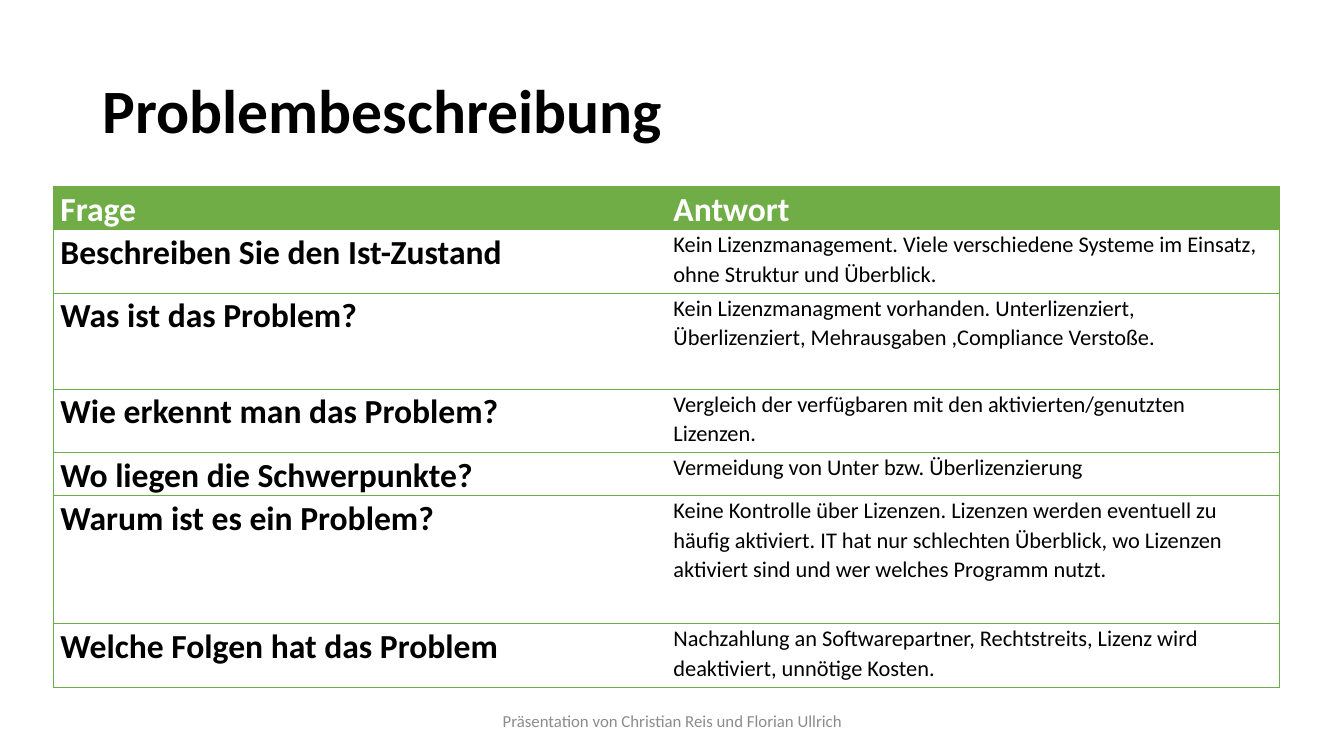
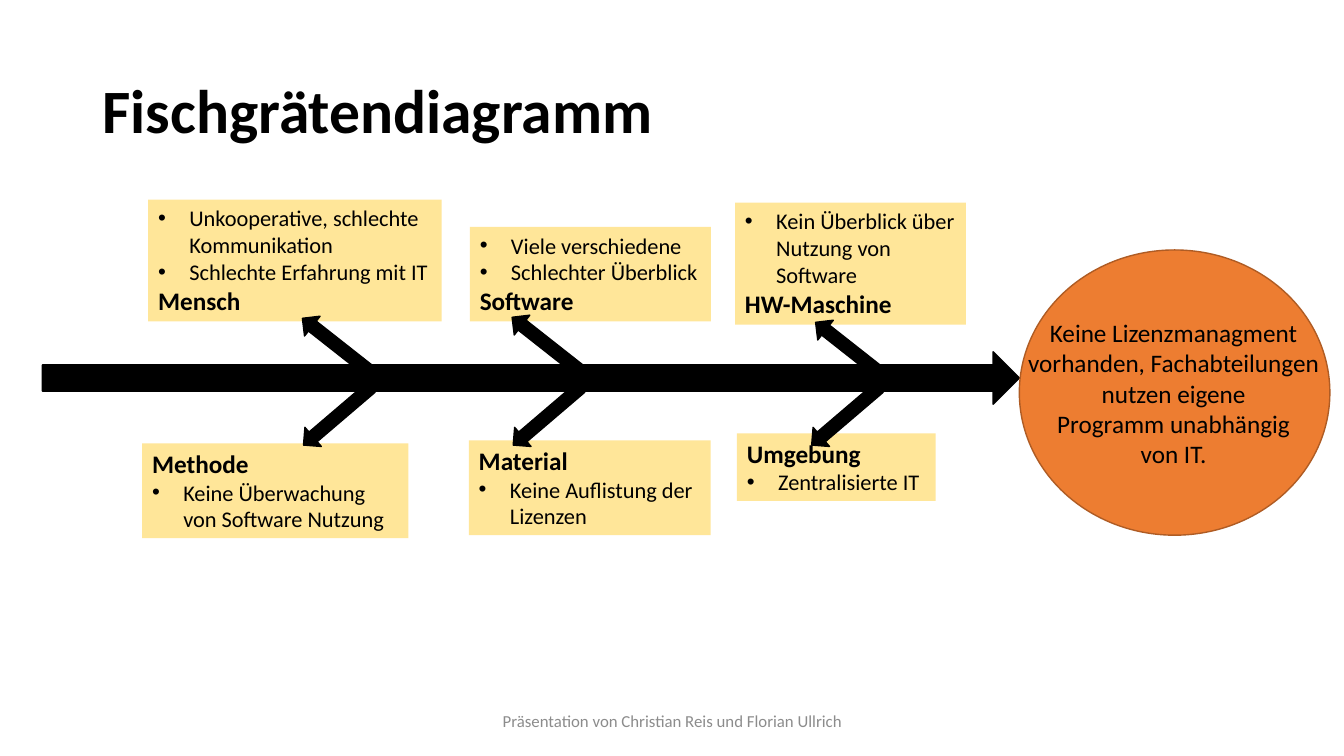
"""Build two slides: a question table and a fishbone diagram."""
from dataclasses import dataclass
from pptx import Presentation
from pptx.dml.color import RGBColor
from pptx.enum.shapes import MSO_SHAPE
from pptx.enum.text import MSO_ANCHOR, MSO_AUTO_SIZE, PP_ALIGN
from pptx.oxml.ns import qn
from pptx.util import Inches, Pt
from lxml import etree

RECT, OVAL = MSO_SHAPE.RECTANGLE, MSO_SHAPE.OVAL
RIGHT, DOWN = MSO_SHAPE.RIGHT_ARROW, MSO_SHAPE.DOWN_ARROW
TOP, MIDDLE = MSO_ANCHOR.TOP, MSO_ANCHOR.MIDDLE
LEFT, CENTER = PP_ALIGN.LEFT, PP_ALIGN.CENTER
GROW = MSO_AUTO_SIZE.SHAPE_TO_FIT_TEXT


@dataclass(frozen=True)
class Theme:
    """Hold colours, font and type sizes."""
    font: str = "Calibri"
    black: str = "000000"
    white: str = "FFFFFF"
    green: str = "70AD47"
    orange: str = "ED7D31"
    rust: str = "AF5C24"
    sand: str = "FFE699"
    gray: str = "8C8C8C"
    title: int = 44
    head: int = 24
    label: int = 18
    body: int = 16
    foot: int = 12


THEME = Theme()
FOOTER = "Präsentation von Christian Reis und Florian Ullrich"
ROWS = [
    (0.37, "Frage", "Antwort"),
    (0.63, "Beschreiben Sie den Ist-Zustand",
     "Kein Lizenzmanagement. Viele verschiedene Systeme im Einsatz, ohne Struktur und Überblick."),
    (0.95, "Was ist das Problem?",
     "Kein Lizenzmanagment vorhanden. Unterlizenziert, Überlizenziert, Mehrausgaben ,Compliance Verstoße."),
    (0.63, "Wie erkennt man das Problem?",
     "Vergleich der verfügbaren mit den aktivierten/genutzten Lizenzen."),
    (0.37, "Wo liegen die Schwerpunkte?", "Vermeidung von Unter bzw. Überlizenzierung"),
    (1.27, "Warum ist es ein Problem?",
     "Keine Kontrolle über Lizenzen. Lizenzen werden eventuell zu häufig aktiviert. "
     "IT hat nur schlechten Überblick, wo Lizenzen aktiviert sind und wer welches Programm nutzt."),
    (0.63, "Welche Folgen hat das Problem",
     "Nachzahlung an Softwarepartner, Rechtstreits, Lizenz wird deaktiviert, unnötige Kosten."),
]
UPPER = [
    ((1.47, 1.98, 2.91, 1.21), "Mensch", True,
     ["Unkooperative, schlechte Kommunikation", "Schlechte Erfahrung mit IT"]),
    ((4.66, 2.25, 2.39, 0.94), "Software", False,
     ["Viele verschiedene", "Schlechter Überblick"]),
    ((7.29, 2.01, 2.29, 1.21), "HW-Maschine", True,
     ["Kein Überblick über Nutzung von Software"]),
]
LOWER = [
    ((1.41, 4.4, 2.64, 0.94), "Methode", True, ["Keine Überwachung von Software Nutzung"]),
    ((4.65, 4.37, 2.4, 0.94), "Material", True, ["Keine Auflistung der Lizenzen"]),
    ((7.31, 4.3, 1.97, 0.67), "Umgebung", False, ["Zentralisierte IT"]),
]
EFFECT = ["Keine Lizenzmanagment", "vorhanden, Fachabteilungen", "nutzen eigene",
          "Programm unabhängig", "von IT."]
BONES = [
    (49.5, [(3.22, 3.69), (5.3, 3.69), (8.26, 3.69)]),
    (128.2, [(3.22, 2.99), (5.3, 2.98), (8.31, 3.03)]),
]


def apply(item, **values):
    """Set each format value on the item."""
    for name, value in values.items():
        setattr(item, name, value)


class Deck:
    """Hold the style and the current slide."""

    def __init__(self, theme):
        """Open a wide, empty deck."""
        self.theme = theme
        self.show = Presentation()
        apply(self.show, slide_width=Inches(13.33), slide_height=Inches(7.5))
        self.slide = None

    def page(self, title):
        """Start a slide with its title and footer."""
        look = self.theme
        self.slide = self.show.slides.add_slide(self.show.slide_layouts[6])
        frame = self.box(0.92, 0.4, 11.5, 1.45, anchor=MIDDLE)
        self.line(frame, title, look.title, bold=True, line_spacing=0.9)
        frame = self.box(4.42, 6.95, 4.5, 0.4, anchor=MIDDLE)
        self.line(frame, FOOTER, look.foot, look.gray, align=CENTER)

    def box(self, *place, wrap=True, anchor=TOP):
        """Add a text box and return its frame."""
        frame = self.slide.shapes.add_textbox(*map(Inches, place)).text_frame
        apply(frame, word_wrap=wrap, vertical_anchor=anchor)
        return frame

    def line(self, frame, text, size, color=None, bold=False, align=LEFT,
             bullet=False, line_spacing=1.0):
        """Write one paragraph into a frame."""
        first = frame.paragraphs[0]
        para = first if not first.runs else frame.add_paragraph()
        apply(para, alignment=align, line_spacing=line_spacing)
        run = para.add_run()
        run.text = text
        apply(run.font, name=self.theme.font, size=Pt(size), bold=bold)
        run.font.color.rgb = RGBColor.from_string(color or self.theme.black)
        if bullet:
            props = para._p.get_or_add_pPr()
            props.set("marL", str(Inches(0.31)))
            props.set("indent", str(-Inches(0.31)))
            etree.SubElement(props, qn("a:buFont"), typeface="Arial")
            etree.SubElement(props, qn("a:buChar"), char="•")

    def shape(self, kind, place, fill, line=None, turn=0):
        """Add a filled preset shape."""
        item = self.slide.shapes.add_shape(kind, *map(Inches, place))
        item.shadow.inherit = False
        item.rotation = turn
        item.fill.solid()
        item.fill.fore_color.rgb = RGBColor.from_string(fill)
        if line:
            item.line.color.rgb = RGBColor.from_string(line)
            item.line.width = Pt(1)
        else:
            item.line.fill.background()
        return item

    def cause(self, place, label, wrap, points, below):
        """Add a box with a label above or below its points."""
        look = self.theme
        frame = self.shape(RECT, place, look.sand).text_frame
        apply(frame, word_wrap=wrap, vertical_anchor=TOP, auto_size=GROW)
        if not below:
            self.line(frame, label, look.label, bold=True)
        for point in points:
            self.line(frame, point, look.body, bullet=True)
        if below:
            self.line(frame, label, look.label, bold=True)

    def edge(self, cell, side, color):
        """Draw or hide one border of a cell."""
        props = cell._tc.get_or_add_tcPr()
        line = etree.SubElement(props, qn("a:ln" + side), w=str(Pt(0.5)))
        if color:
            fill = etree.SubElement(line, qn("a:solidFill"))
            etree.SubElement(fill, qn("a:srgbClr"), val=color)
        else:
            etree.SubElement(line, qn("a:noFill"))

    def table(self, rows, place, width):
        """Add a two-column table with a coloured header."""
        look = self.theme
        grid = self.slide.shapes.add_table(len(rows), 2, *map(Inches, place)).table
        apply(grid, first_row=False, horz_banding=False)
        for column in grid.columns:
            column.width = Inches(width)
        for r, (height, *texts) in enumerate(rows):
            grid.rows[r].height = Inches(height)
            for c, text in enumerate(texts):
                cell = grid.cell(r, c)
                apply(cell, margin_left=Inches(0.07), margin_right=Inches(0.07),
                      margin_top=0, margin_bottom=0)
                inner = "R" if c == 0 else "L"
                for side in "LRTB":
                    self.edge(cell, side, None if side == inner else look.green)
                cell.fill.solid()
                cell.fill.fore_color.rgb = RGBColor.from_string(
                    look.white if r else look.green)
                head = r == 0 or c == 0
                self.line(cell.text_frame, text, look.head if head else look.body,
                          look.black if r else look.white, bold=head,
                          line_spacing=1.07)


def main():
    """Build and save the deck."""
    deck = Deck(THEME)
    deck.page("Problembeschreibung")
    deck.table(ROWS, (0.53, 1.85, 12.16, 4.85), 6.08)

    deck.page("Fischgrätendiagramm")
    deck.shape(RIGHT, (0.42, 3.49, 9.69, 0.52), THEME.black, THEME.black)
    deck.shape(OVAL, (10.11, 2.48, 3.08, 2.83), THEME.orange, THEME.rust)
    frame = deck.box(10.05, 3.1, 3.18, 1.62, wrap=False)
    frame.auto_size = GROW
    for text in EFFECT:
        deck.line(frame, text, THEME.label, align=CENTER)
    for group, below in ((UPPER, True), (LOWER, False)):
        for cause in group:
            deck.cause(*cause, below)
    for turn, spots in BONES:
        for spot in spots:
            deck.shape(DOWN, (*spot, 0.25, 0.88), THEME.black, THEME.black, turn)
    deck.show.save("out.pptx")


if __name__ == "__main__":
    main()
